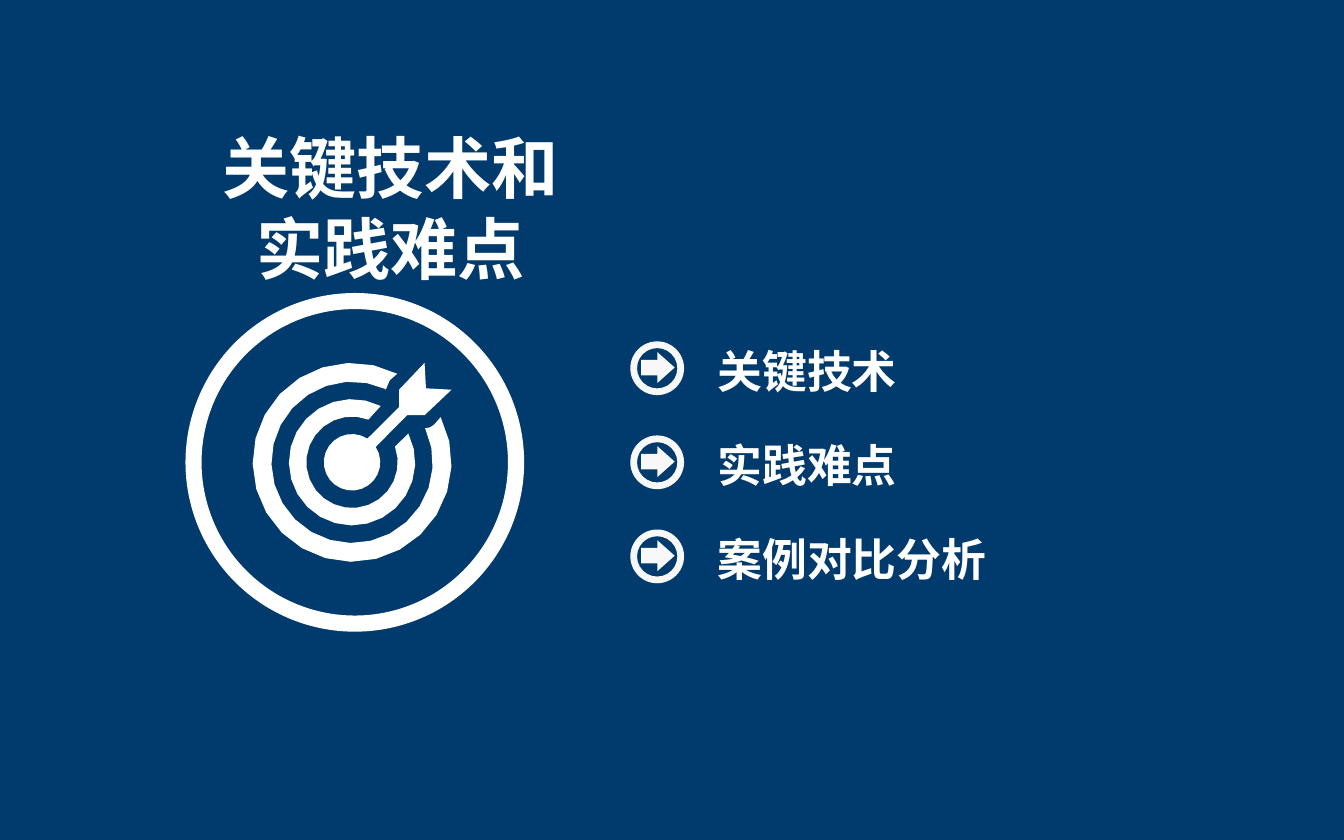
import math

import pptx
import pptx.dml.color
import pptx.enum.shapes
import pptx.enum.text
import pptx.oxml.ns
import pptx.util
from pptx.util import Inches

FONT = "Noto Sans CJK SC"
NAVY, WHITE, OFF_WHITE = "013B6D", "FFFFFF", "F8F8F8"
PRESET = pptx.enum.shapes.MSO_SHAPE


def color(value):
    return pptx.dml.color.RGBColor.from_string(value)


def write(box, text, size=24, fill=WHITE, bold=True,
          align=pptx.enum.text.PP_ALIGN.LEFT):
    """Fill a box with one paragraph per line of text."""
    frame = box.text_frame
    frame.word_wrap = False
    frame.auto_size = pptx.enum.text.MSO_AUTO_SIZE.NONE
    frame.vertical_anchor = pptx.enum.text.MSO_ANCHOR.TOP
    for index, line in enumerate(text.split("\n")):
        para = frame.add_paragraph() if index else frame.paragraphs[0]
        para.alignment = align
        para.space_before = pptx.util.Pt(0)
        para.line_spacing = pptx.util.Pt(size * 1.2)
        span = para.add_run()
        span.text = line
        span.font.name = FONT
        span.font.size = pptx.util.Pt(size)
        span.font.bold = bold
        span.font.color.rgb = color(fill)
        east_asian = span.font._element.makeelement(
            pptx.oxml.ns.qn("a:ea"), {"typeface": FONT})
        span.font._element.append(east_asian)


def arc(x, y, radius, start, end):
    """Points along an arc; angles in degrees, clockwise from the right."""
    steps = math.ceil(abs(end - start) / 15)
    angles = [math.radians(start + (end - start) * i / steps)
              for i in range(steps + 1)]
    return [(x + radius * math.cos(a), y + radius * math.sin(a)) for a in angles]


class Slide:
    def __init__(self, deck):
        self.page = deck.slides.add_slide(deck.slide_layouts[5])
        fill = self.page.background.fill
        fill.solid()
        fill.fore_color.rgb = color(NAVY)

    def title(self, text, left, top, width, height):
        box = self.page.shapes.title
        box.left, box.top = Inches(left), Inches(top)
        box.width, box.height = Inches(width), Inches(height)
        write(box, text, size=36, align=pptx.enum.text.PP_ALIGN.CENTER)

    def label(self, text, left, top, width, height):
        box = self.page.shapes.add_textbox(
            Inches(left), Inches(top), Inches(width), Inches(height))
        write(box, text)

    def paint(self, shape, fill):
        shape.shadow.inherit = False
        shape.fill.solid()
        shape.fill.fore_color.rgb = color(fill)
        shape.line.fill.background()

    def preset(self, kind, left, top, width, height, fill, adjust):
        shape = self.page.shapes.add_shape(
            kind, Inches(left), Inches(top), Inches(width), Inches(height))
        for index, value in enumerate(adjust):
            shape.adjustments[index] = value
        self.paint(shape, fill)

    def ring(self, x, y, radius, thickness, fill):
        size = 2 * radius
        self.preset(PRESET.DONUT, x - radius, y - radius, size, size, fill,
                    [thickness / size])

    def outline(self, points, fill):
        points = [(Inches(x), Inches(y)) for x, y in points]
        builder = self.page.shapes.build_freeform(*points[0])
        builder.add_line_segments(points[1:], close=True)
        self.paint(builder.convert_to_shape(), fill)

    def arrow_icon(self, x, y):
        self.ring(x, y, 0.2, 0.05, OFF_WHITE)
        self.preset(PRESET.RIGHT_ARROW, x - 0.12, y - 0.12, 0.25, 0.23,
                    OFF_WHITE, [0.5, 0.56])

    def target_icon(self, x, y):
        self.ring(x, y, 1.26, 0.12, WHITE)
        eye = x - 0.02
        # Bullseye with the dart in it
        dart = [(2.97, 3.03), (2.97, 2.9), (3.16, 2.7), (3.17, 2.89),
                (3.36, 2.9), (3.16, 3.09), (3.03, 3.09)]
        self.outline(arc(eye, y, 0.21, -33, 303) + dart, WHITE)
        # Two open rings around it
        self.outline(arc(eye, y, 0.47, -27, 297)
                     + arc(eye, y, 0.34, 291, -20), WHITE)
        self.outline(arc(eye, y, 0.74, -27, 297) + [(2.9, 2.83), (2.87, 2.9)]
                     + arc(eye, y, 0.6, 295, -25)
                     + [(3.2, 3.18), (3.23, 3.16)], WHITE)


def main():
    deck = pptx.Presentation()
    deck.slide_width, deck.slide_height = Inches(10), Inches(6.25)
    slide = Slide(deck)

    # Section title
    slide.title("关键技术和\n实践难点", 1.54, 0.89, 2.73, 1.31)

    # Topic list
    for index, topic in enumerate(["关键技术", "实践难点", "案例对比分析"]):
        middle = 2.74 + 0.7 * index
        slide.arrow_icon(4.89, middle)
        slide.label(topic, 5.24, middle - 0.23, 0.22 + len(topic) / 3, 0.5)

    # Target emblem
    slide.target_icon(2.64, 3.44)

    deck.save("out.pptx")


if __name__ == "__main__":
    main()
